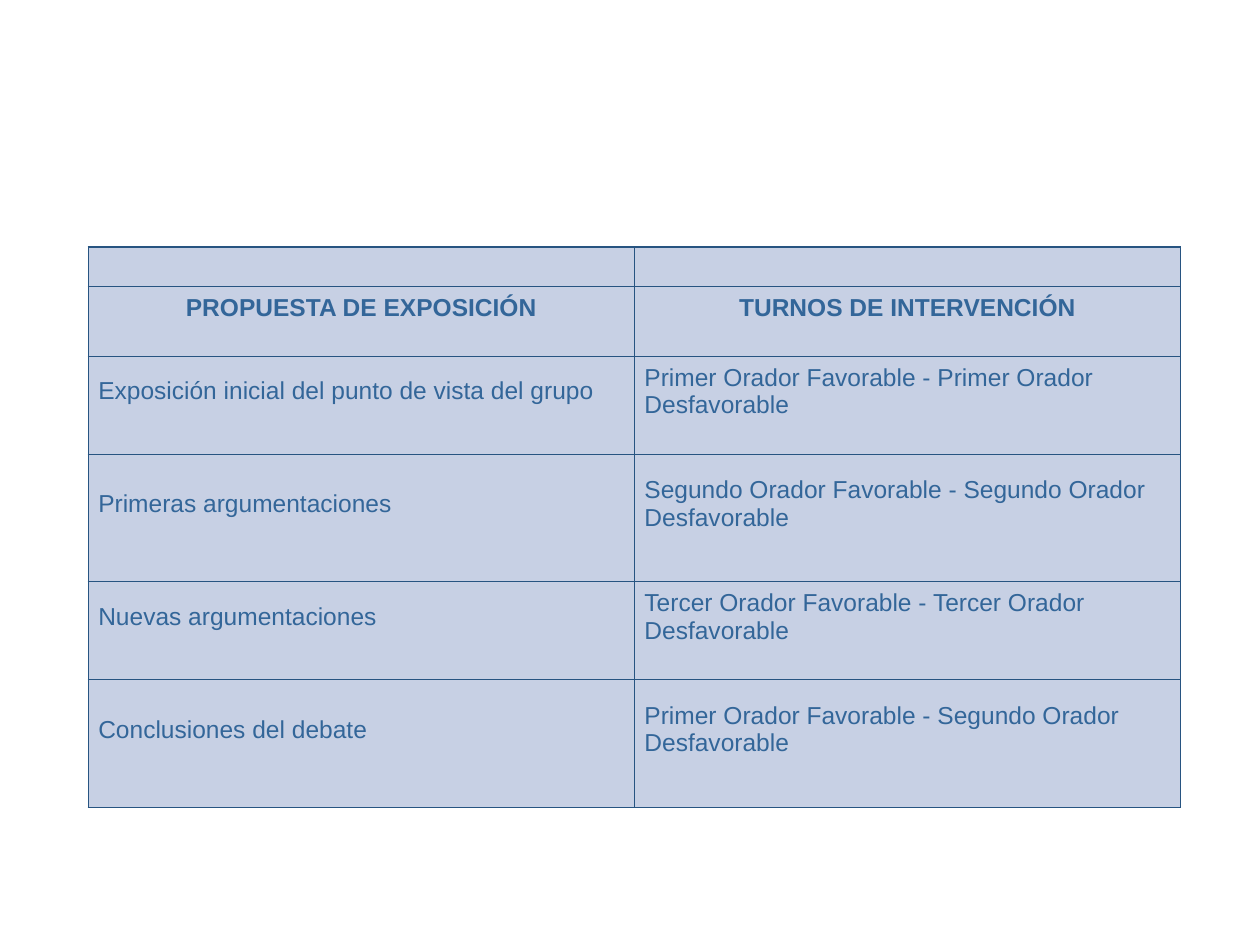
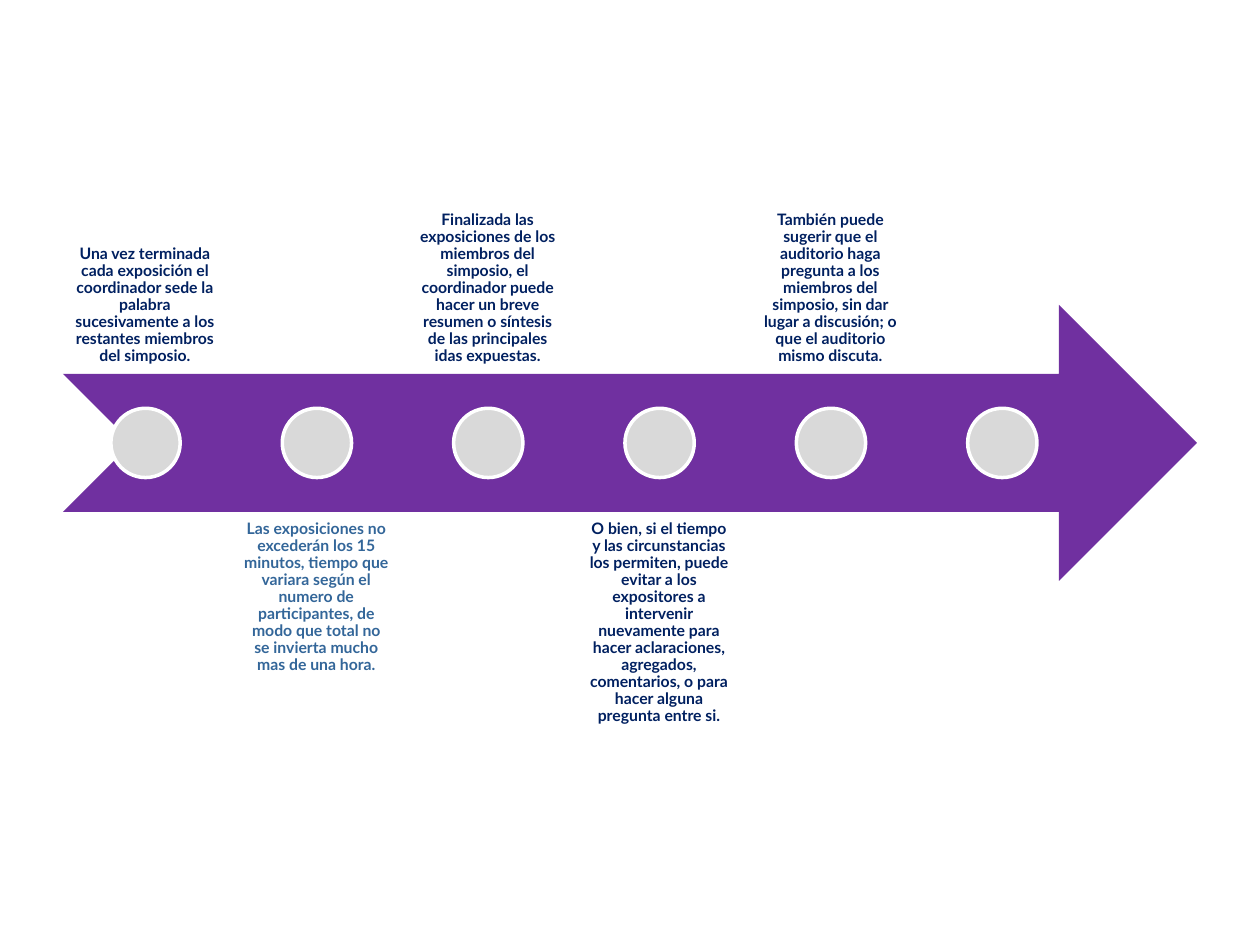
from dataclasses import dataclass

from lxml.etree import SubElement
from pptx import Presentation
from pptx.dml.color import RGBColor
from pptx.enum.shapes import MSO_SHAPE
from pptx.enum.text import MSO_ANCHOR, PP_ALIGN
from pptx.oxml.ns import qn
from pptx.util import Inches, Pt


@dataclass(frozen=True)
class Theme:
    blue: str = "336699"
    navy: str = "002060"
    purple: str = "7030A0"
    gray: str = "D9D9D9"
    white: str = "FFFFFF"
    cell: str = "C7D0E4"
    border: str = "275481"
    table_font: str = "Arial"
    step_font: str = "Lato"
    table_size: int = 14
    step_size: int = 9


THEME = Theme()

TURNS = [
    ("", ""),
    ("PROPUESTA DE EXPOSICIÓN", "TURNOS DE INTERVENCIÓN"),
    ("Exposición inicial del punto de vista del grupo",
     "Primer Orador Favorable - Primer Orador Desfavorable"),
    ("Primeras argumentaciones",
     "Segundo Orador Favorable - Segundo Orador Desfavorable"),
    ("Nuevas argumentaciones",
     "Tercer Orador Favorable - Tercer Orador Desfavorable"),
    ("Conclusiones del debate",
     "Primer Orador Favorable - Segundo Orador Desfavorable"),
]
HEIGHTS = [0.31, 0.55, 0.78, 1.01, 0.78, 1.01]
HEADER = 1

STEPS = [
    ("Una vez terminada cada exposición el coordinador sede la palabra "
     "sucesivamente a los restantes miembros del simposio.", THEME.navy),
    ("Las exposiciones no excederán los 15 minutos, tiempo que variara según "
     "el numero de participantes, de modo que total no se invierta mucho mas "
     "de una hora.", THEME.blue),
    ("Finalizada las exposiciones de los miembros del simposio, el "
     "coordinador puede hacer un breve resumen o síntesis de las principales "
     "idas expuestas.", THEME.navy),
    ("O bien, si el tiempo y las circunstancias los permiten, puede evitar a "
     "los expositores a intervenir nuevamente para hacer aclaraciones, "
     "agregados, comentarios, o para hacer alguna pregunta entre si.",
     THEME.navy),
    ("También puede sugerir que el auditorio haga pregunta a los miembros del "
     "simposio, sin dar lugar a discusión; o que el auditorio mismo discuta.",
     THEME.navy),
]
DOTS = 6
PITCH = 1.36


def box(*sides):
    return [Inches(side) for side in sides]


def paint(fill, color):
    fill.solid()
    fill.fore_color.rgb = RGBColor.from_string(color)


def style(par, font, size, color, bold):
    for run in par.runs:
        run.font.name = font
        run.font.size = Pt(size)
        run.font.bold = bold
        run.font.color.rgb = RGBColor.from_string(color)


def frame(cell):
    """Draw the four borders of a cell, ahead of its fill."""
    props = cell._tc.get_or_add_tcPr()
    for side in ("a:lnL", "a:lnR", "a:lnT", "a:lnB"):
        line = SubElement(props, qn(side), w=str(Pt(0.75)))
        fill = SubElement(line, qn("a:solidFill"))
        SubElement(fill, qn("a:srgbClr"), val=THEME.border)


def fill_cell(cell, text, head):
    frame(cell)
    paint(cell.fill, THEME.cell)
    cell.vertical_anchor = MSO_ANCHOR.MIDDLE
    cell.margin_left = cell.margin_right = Inches(0.08)
    cell.margin_top = Inches(0.04)
    # Filled cells keep one free line below the text
    cell.margin_bottom = Inches(0.26 if text else 0.04)
    par = cell.text_frame.paragraphs[0]
    if not text:
        SubElement(par._p, qn("a:endParaRPr"), sz=str(THEME.table_size * 100))
        return
    par.text = text
    par.alignment = PP_ALIGN.CENTER if head else PP_ALIGN.LEFT
    style(par, THEME.table_font, THEME.table_size, THEME.blue, head)


def add_turns(slide):
    table = slide.shapes.add_table(
        len(TURNS), 2, *box(0.7, 1.96, 8.67, sum(HEIGHTS))).table
    table.first_row = table.horz_banding = False
    for r, (texts, height) in enumerate(zip(TURNS, HEIGHTS)):
        table.rows[r].height = Inches(height)
        for c, text in enumerate(texts):
            fill_cell(table.cell(r, c), text, r == HEADER)


def add_shape(slide, kind, place, color):
    shape = slide.shapes.add_shape(kind, *box(*place))
    shape.shadow.inherit = False
    paint(shape.fill, color)
    shape.line.fill.background()
    return shape


def add_step(slide, i, text, color):
    """Place a step above the arrow when i is even, below when odd."""
    above = i % 2 == 0
    top = 0.78 if above else 4.06
    body = slide.shapes.add_textbox(
        *box(0.5 + i * PITCH, top, 1.3, 2.19)).text_frame
    body.word_wrap = True
    body.vertical_anchor = MSO_ANCHOR.BOTTOM if above else MSO_ANCHOR.TOP
    body.margin_left = body.margin_right = Inches(0.07)
    body.margin_top = body.margin_bottom = Inches(0.07)
    body.text = text
    par = body.paragraphs[0]
    par.alignment = PP_ALIGN.CENTER
    par.line_spacing = 0.9
    style(par, THEME.step_font, THEME.step_size, color, True)


def add_flow(slide):
    add_shape(slide, MSO_SHAPE.NOTCHED_RIGHT_ARROW,
              (0.5, 2.42, 9, 2.19), THEME.purple)
    for i, (text, color) in enumerate(STEPS):
        add_step(slide, i, text, color)
    for i in range(DOTS):
        dot = add_shape(slide, MSO_SHAPE.OVAL,
                        (0.88 + i * PITCH, 3.24, 0.55, 0.55), THEME.gray)
        paint(dot.line.fill, THEME.white)
        dot.line.width = Pt(2)


def main():
    deck = Presentation()
    deck.slide_width, deck.slide_height = box(10, 7.5)
    blank = deck.slide_layouts[6]
    for build in (add_turns, add_flow):
        build(deck.slides.add_slide(blank))
    deck.save("out.pptx")


if __name__ == "__main__":
    main()
